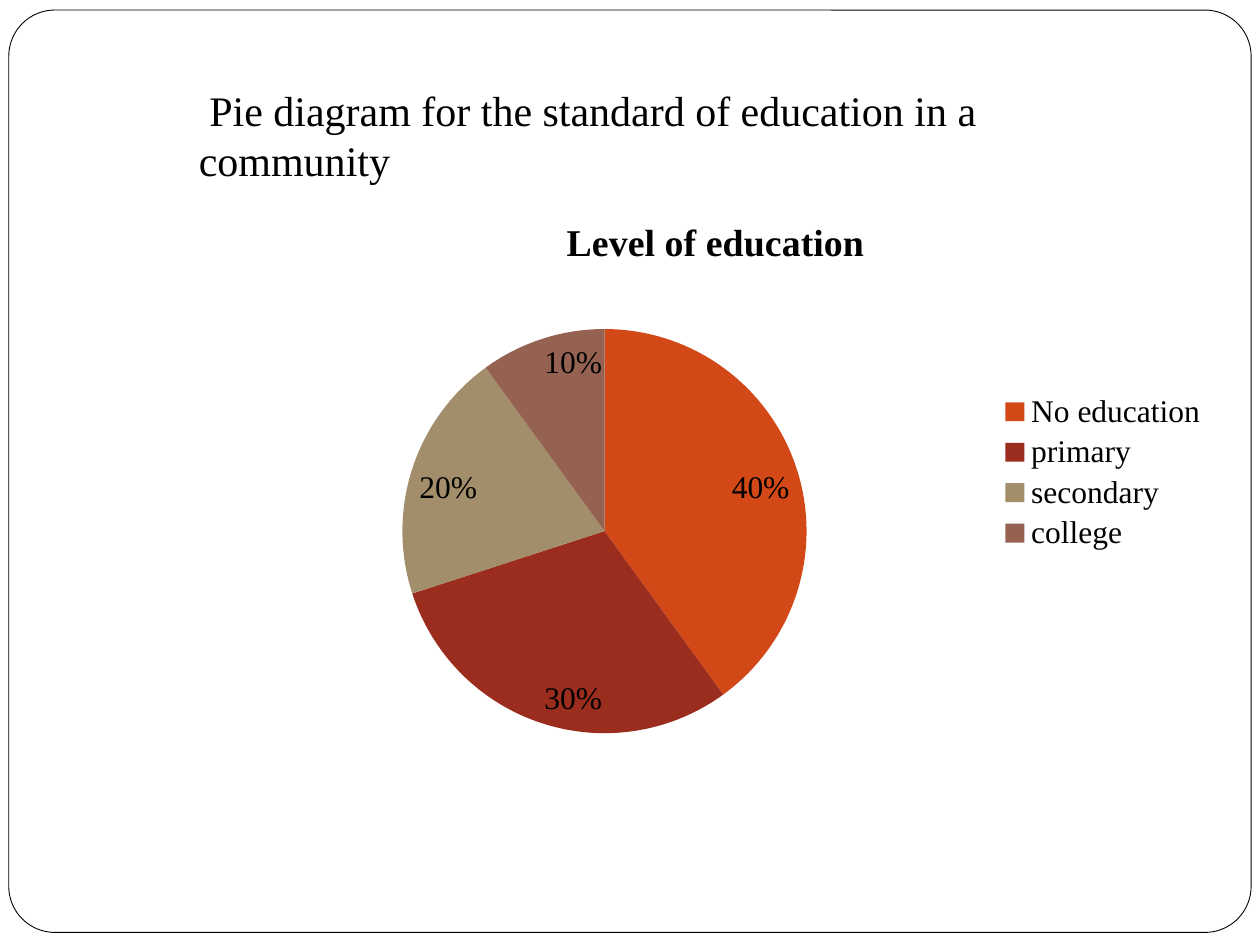
from lxml import etree
from pptx import Presentation
from pptx.chart.data import CategoryChartData
from pptx.dml.color import RGBColor
from pptx.enum.chart import XL_CHART_TYPE, XL_LABEL_POSITION, XL_LEGEND_POSITION
from pptx.enum.shapes import MSO_SHAPE
from pptx.enum.text import MSO_AUTO_SIZE
from pptx.oxml.ns import qn
from pptx.util import Inches, Pt

PIE = XL_CHART_TYPE.PIE
INSIDE_END = XL_LABEL_POSITION.INSIDE_END
RIGHT = XL_LEGEND_POSITION.RIGHT
ROUNDED = MSO_SHAPE.ROUNDED_RECTANGLE
GROW = MSO_AUTO_SIZE.SHAPE_TO_FIT_TEXT
FONT = "Times New Roman"
COLORS = {
    "paper": "FFFFFF",
    "ink": "000000",
    "No education": "D34817",
    "primary": "9B2D1F",
    "secondary": "A28E6A",
    "college": "956251",
}
SHARES = {"No education": 0.4, "primary": 0.3, "secondary": 0.2, "college": 0.1}


def color(name):
    return RGBColor.from_string(COLORS[name])


def write_text(para, text, size=18, bold=False, ink="ink"):
    span = para.add_run()
    span.text = text
    span.font.name = FONT
    span.font.size = Pt(size)
    span.font.bold = bold
    span.font.color.rgb = color(ink)


deck = Presentation()
deck.slide_width = Inches(10)
deck.slide_height = Inches(7.5)
page = deck.slides.add_slide(deck.slide_layouts[6])

frame = page.shapes.add_shape(ROUNDED, Inches(0.07), Inches(0.08), Inches(9.86), Inches(7.32))
frame.adjustments[0] = 0.05
frame.shadow.inherit = False
frame.fill.solid()
frame.fill.fore_color.rgb = color("paper")
frame.line.color.rgb = color("ink")
frame.line.width = Pt(0.5)

data = CategoryChartData(number_format="0%")
data.categories = list(SHARES)
data.add_series("Level of education", list(SHARES.values()))
chart = page.shapes.add_chart(
    PIE, Inches(1.67), Inches(1.53), Inches(8.02), Inches(4.44), data
).chart
chart.font.name = FONT
chart.font.size = Pt(18)
chart.font.color.rgb = color("ink")
chart.has_title = True
write_text(chart.chart_title.text_frame.paragraphs[0], "Level of education", size=21.6, bold=True)
chart.has_legend = True
chart.legend.position = RIGHT
chart.legend.include_in_layout = False

pie = chart.plots[0]
pie.vary_by_categories = True
for index, level in enumerate(SHARES):
    fill = pie.series[0].points[index].format.fill
    fill.solid()
    fill.fore_color.rgb = color(level)

pie.has_data_labels = True
labels = pie.data_labels
labels.show_value = True
labels.show_percentage = False
labels.number_format = "0%"
labels.number_format_is_linked = False
labels.position = INSIDE_END

plot_area = chart.element.find(".//" + qn("c:plotArea"))
layout = plot_area.find(qn("c:layout"))
if layout is None:
    layout = etree.Element(qn("c:layout"))
    plot_area.insert(0, layout)
manual = etree.SubElement(layout, qn("c:manualLayout"))
for tag, value in [
    ("layoutTarget", "inner"), ("xMode", "edge"), ("yMode", "edge"),
    ("x", "0.19"), ("y", "0.24"), ("w", "0.4"), ("h", "0.73"),
]:
    etree.SubElement(manual, qn("c:" + tag)).set("val", value)

box = page.shapes.add_textbox(Inches(1.48), Inches(0.62), Inches(6.64), Inches(0.91))
box.text_frame.word_wrap = True
box.text_frame.auto_size = GROW
write_text(
    box.text_frame.paragraphs[0],
    " Pie diagram for the standard of education in a community",
    size=24,
)

deck.save("out.pptx")
